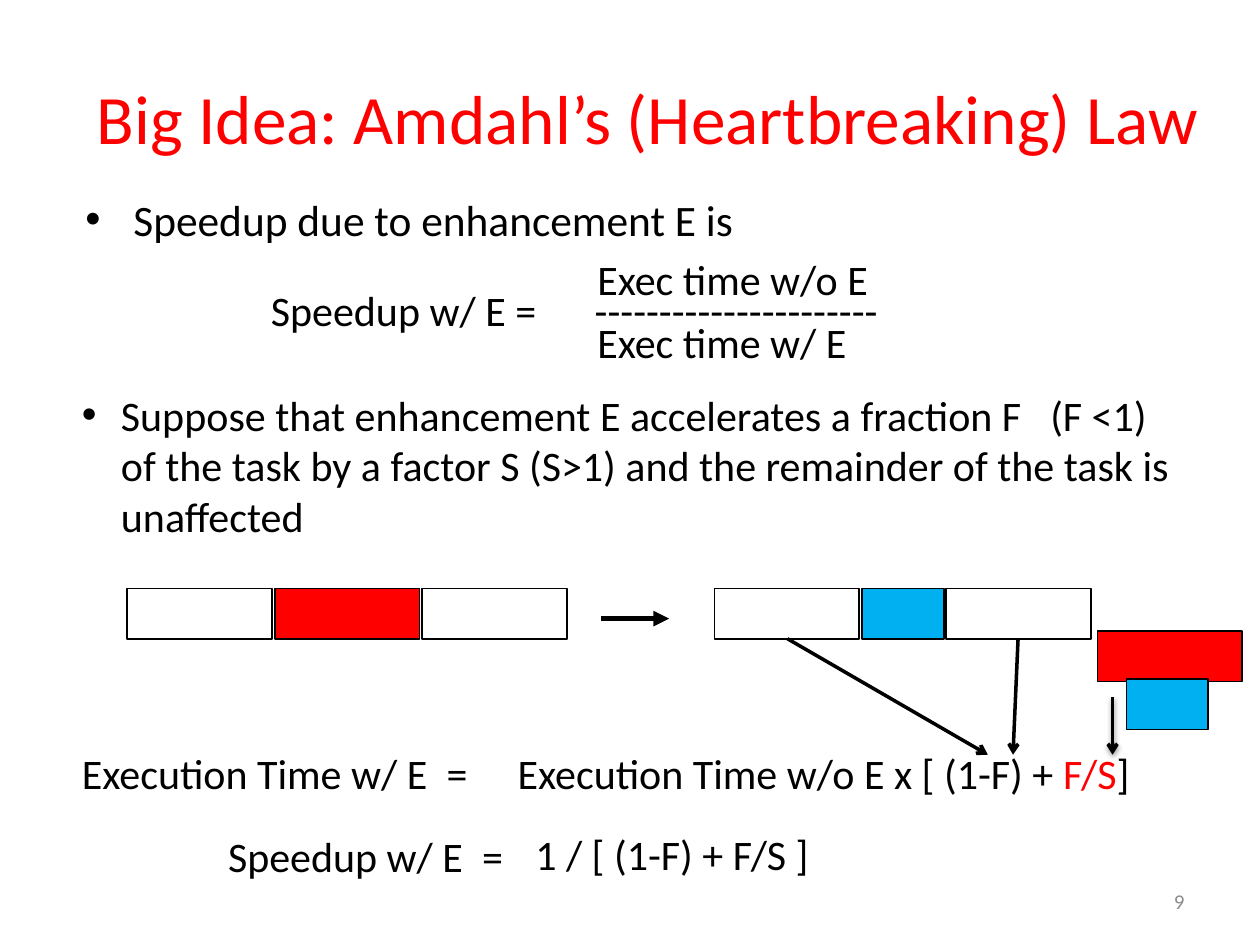
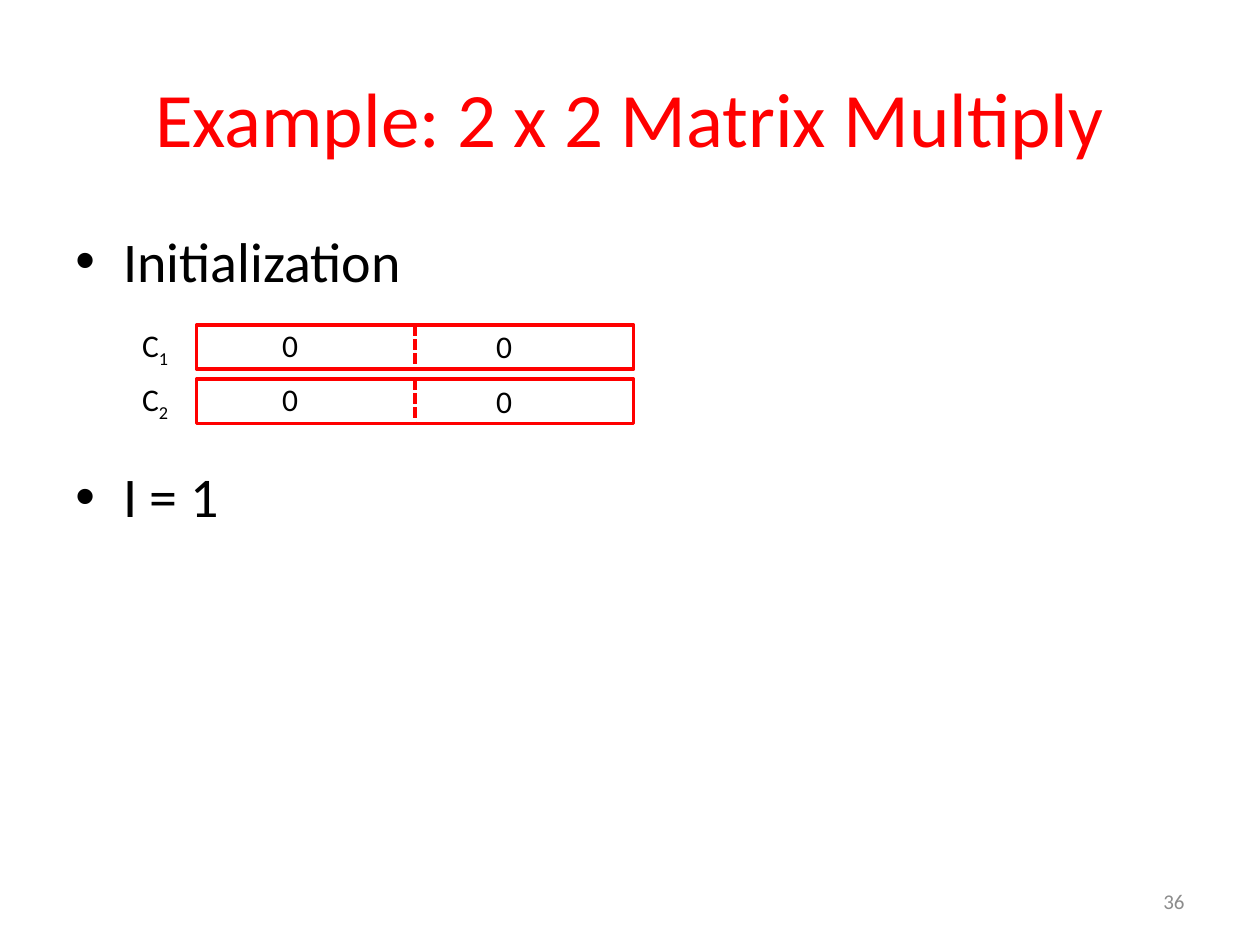
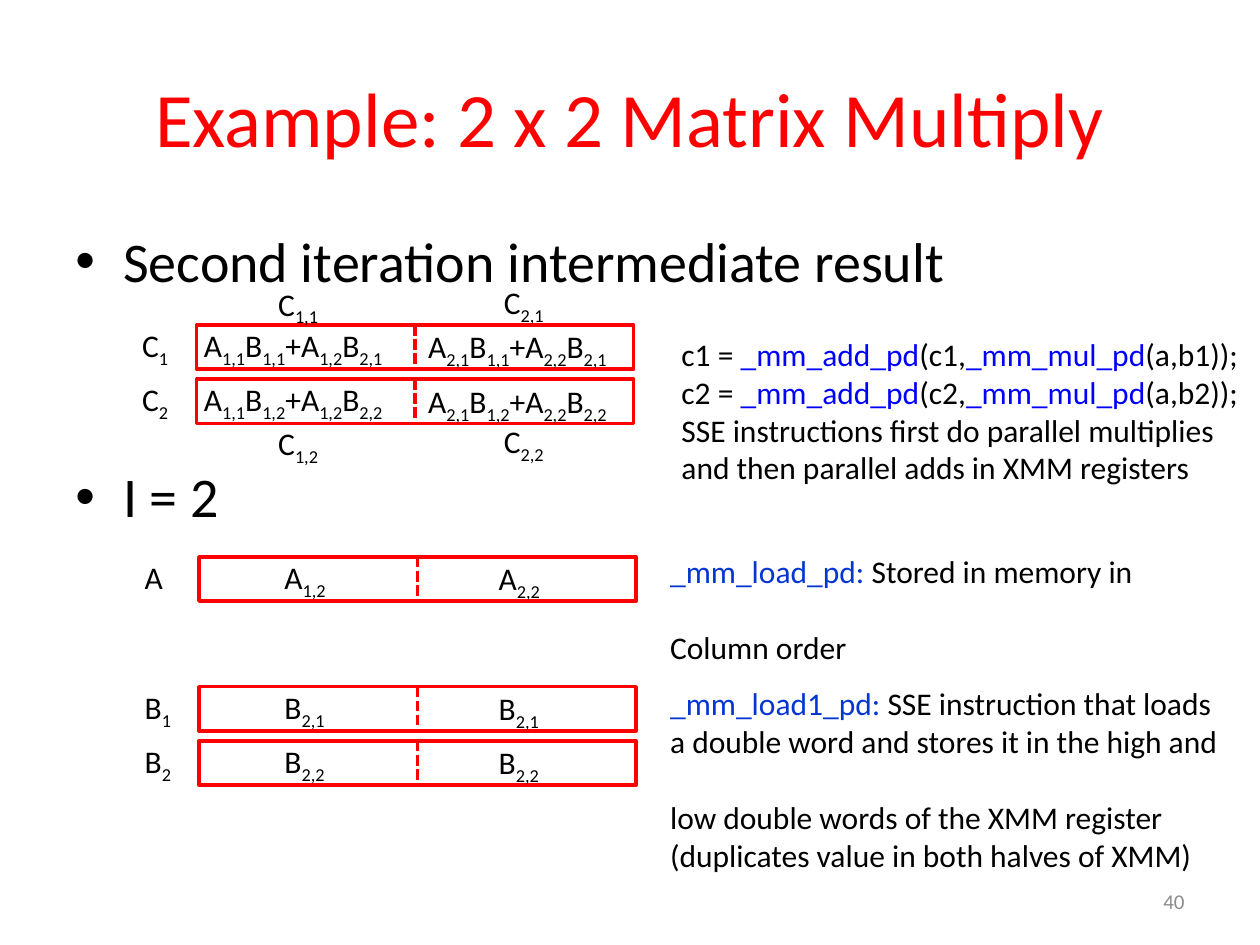
"""Build three lecture slides on Amdahl's law and a 2 x 2 SSE matrix multiply."""
from lxml.etree import SubElement
from pptx import Presentation
from pptx.dml.color import RGBColor
from pptx.enum.dml import MSO_LINE
from pptx.enum.shapes import MSO_CONNECTOR as Connector, MSO_SHAPE as Shape
from pptx.enum.text import MSO_ANCHOR as Anchor, PP_ALIGN as Align
from pptx.oxml.ns import qn
from pptx.util import Inches, Pt

FONT = "Calibri"
WIDTH, HEIGHT = 10, 7.5
BLACK = RGBColor(0x00, 0x00, 0x00)
RED = RGBColor(0xFF, 0x00, 0x00)
SKY = RGBColor(0x00, 0xB0, 0xF0)
CODE = RGBColor(0x00, 0x00, 0xFF)
LOAD = RGBColor(0x05, 0x36, 0xD2)
GREY = RGBColor(0x8C, 0x8C, 0x8C)

ROOMY, TIGHT = (0.1, 0.05), (0.07, 0.03)
BODY_INDENT, FORMULA_INDENT = 0.38, 0.31
WIDE, WIDER = (" ", {"spacing": 5.4}), (" ", {"spacing": 10.8})

LAW_TITLE = "Big Idea: Amdahl’s (Heartbreaking) Law"
LAW_TEXTS = [
    ((2.08, 2.23, 2.5, 0.46), ["Speedup w/ E ="], TIGHT),
    ((4.65, 2.23, 2.76, 0.46), ["----------------------"], TIGHT),
    ((4.67, 1.98, 3.08, 0.45), ["Exec time w/o E"], TIGHT),
    ((4.67, 2.48, 3.08, 0.45), ["Exec time w/ E"], TIGHT),
    ((0.58, 5.9, 3.4, 0.46), ["Execution Time w/ E", WIDE, "="], TIGHT),
    ((1.74, 6.56, 2.4, 0.46), ["Speedup w/ E", WIDE, "="], TIGHT),
    ((4.01, 5.88, 5.3, 0.5),
     ["Execution Time w/o E x [ (1-F) + ", ("F/S", {"color": RED}), "]"], ROOMY),
    ((4.15, 6.53, 2.6, 0.5), ["1 / [ (1-F) + F/S ]"], ROOMY),
]
SUPPOSE = ["Suppose that enhancement E accelerates a fraction F", WIDER,
           "(F <1) of the task by a factor S (S>1) and the remainder of the task is unaffected"]
PART, FAST_PART, PART_HEIGHT, PART_GAP = 1.15, 0.65, 0.4, 0.02
TASKS = [
    (1.01, 4.67, [(PART, None), (PART, RED), (PART, None)]),
    (5.67, 4.67, [(PART, None), (FAST_PART, SKY), (PART, None)]),
    (8.71, 5.01, [(PART, RED)]),
    (8.94, 5.39, [(FAST_PART, SKY)]),
]
ARROWS = [
    ((4.77, 4.91), (5.31, 4.91), 3, "triangle", False),
    ((8.08, 5.07), (8.04, 5.99), 2, "arrow", False),
    ((6.25, 5.07), (7.84, 5.99), 2, "arrow", False),
    ((8.83, 5.53), (8.83, 5.99), 2, "arrow", True),
]

MATRIX_TITLE = "Example: 2 x 2 Matrix Multiply"
REGISTER_WIDTH, REGISTER_HEIGHT, REGISTER_STEP = 3.47, 0.35, 0.43
SHORT_CELLS, LONG_CELLS = (0.58, 2.28), (-0.04, 1.74)
REGISTERS_INIT = [(1.56, 2.58, SHORT_CELLS, [("C~1", "0", "0"), ("C~2", "0", "0")])]
REGISTERS_SECOND = [
    (1.56, 2.58, LONG_CELLS, [
        ("C~1", "A~1,1~B~1,1~+A~1,2~B~2,1", "A~2,1~B~1,1~+A~2,2~B~2,1"),
        ("C~2", "A~1,1~B~1,2~+A~1,2~B~2,2", "A~2,1~B~1,2~+A~2,2~B~2,2")]),
    (1.58, 4.42, SHORT_CELLS, [("A", "A~1,2", "A~2,2")]),
    (1.58, 5.45, SHORT_CELLS, [("B~1", "B~2,1", "B~2,1"), ("B~2", "B~2,2", "B~2,2")]),
]
RESULT_LABELS = [("C~1,1", 2.11, 2.21), ("C~1,2", 2.11, 3.32),
                 ("C~2,1", 3.9, 2.2), ("C~2,2", 3.9, 3.3)]


def update_call(number):
    """Return the spans of one multiply-add statement."""
    add, multiply = [(name, {"color": CODE}) for name in ("_mm_add_pd", "_mm_mul_pd")]
    return [f"c{number} = ", add, f"(c{number},", multiply, f"(a,b{number}));"]


NOTES = [
    ((5.31, 2.61, 4.69, 1.31),
     [update_call(1), update_call(2), ["SSE instructions first do parallel multiplies"],
      ["and then parallel adds in XMM registers"]], None),
    ((5.22, 4.33, 4.6, 1.01),
     [[("_mm_load_pd: ", {"color": LOAD}), "Stored in memory in"], ["Column order"]], 1),
    ((5.22, 5.38, 4.7, 1.61),
     [[("_mm_load1_pd: ", {"color": LOAD}), "SSE instruction that loads"],
      ["a double word and stores it in the high and"],
      ["low double words of the XMM register"],
      ["(duplicates value in both halves of XMM)"]], 2),
]


def subscripts(text):
    """Turn every second part between tildes into a subscript span."""
    return [(part, {"baseline": -25} if order % 2 else {})
            for order, part in enumerate(text.split("~"))]


def add_span(para, text, size, color, baseline=None, spacing=None):
    """Add one formatted run; spacing is in points, baseline in percent."""
    span = para.add_run()
    span.text = text
    for name, value in {"name": FONT, "size": Pt(size)}.items():
        setattr(span.font, name, value)
    span.font.color.rgb = color
    for name, value, scale in (("baseline", baseline, 1000), ("spc", spacing, 100)):
        if value is not None:
            span.font._element.set(name, str(round(value * scale)))


def add_text(page, place, paras, size=18, color=BLACK, align=Align.LEFT,
             anchor=Anchor.TOP, inset=ROOMY, indent=None, gap_at=None, gap=22):
    """Add a text box; indent makes bullets, gap_at names a paragraph set lower."""
    box = page.shapes.add_textbox(*map(Inches, place))
    frame = box.text_frame
    side, edge = map(Inches, inset)
    settings = {"word_wrap": True, "vertical_anchor": anchor, "margin_left": side,
                "margin_right": side, "margin_top": edge, "margin_bottom": edge}
    for name, value in settings.items():
        setattr(frame, name, value)
    for order, spans in enumerate(paras):
        para = frame.add_paragraph() if order else frame.paragraphs[0]
        para.alignment = align
        if order and order == gap_at:
            para.space_before = Pt(gap)
        if indent:
            layout = para._p.get_or_add_pPr()
            layout.set("marL", str(Inches(indent)))
            layout.set("indent", str(-Inches(indent)))
            SubElement(layout, qn("a:buFont"), typeface="Arial")
            SubElement(layout, qn("a:buChar"), char="•")
        for span in spans:
            text, look = (span, {}) if isinstance(span, str) else span
            add_span(para, text, size, **{"color": color, **look})


def add_box(page, place, fill, line, weight):
    """Add an outlined rectangle, filled when a colour is given."""
    box = page.shapes.add_shape(Shape.RECTANGLE, *map(Inches, place))
    box.shadow.inherit = False
    if fill is None:
        box.fill.background()
    else:
        box.fill.solid()
        box.fill.fore_color.rgb = fill
    box.line.color.rgb = line
    box.line.width = Pt(weight)


def add_line(page, start, end, color, weight, head=None, dash=None, shadow=False):
    """Add a straight line with an optional arrowhead, dash and soft shadow."""
    line = page.shapes.add_connector(Connector.STRAIGHT, *map(Inches, start + end))
    line.line.color.rgb = color
    line.line.width = Pt(weight)
    if dash:
        line.line.dash_style = dash
    if head:
        SubElement(line.line._get_or_add_ln(), qn("a:tailEnd"), type=head)
    effects = SubElement(line._element.spPr, qn("a:effectLst"))
    if shadow:
        soft = SubElement(effects, qn("a:outerShdw"), blurRad=str(Pt(3.1)),
                          dist=str(Pt(1.6)), dir="5400000", rotWithShape="0")
        tint = SubElement(soft, qn("a:srgbClr"), val=str(BLACK))
        SubElement(tint, qn("a:alpha"), val="38000")


def add_page(deck, title, number, size=44, width=9):
    """Add a blank page with the shared title and page number."""
    page = deck.slides.add_slide(deck.slide_layouts[6])
    add_text(page, (0.5, 0.3, width, 1.25), [[title]], size, RED, Align.CENTER, Anchor.MIDDLE)
    add_text(page, (7.17, 6.95, 2.33, 0.4), [[str(number)]], 12, GREY, Align.RIGHT,
             Anchor.MIDDLE)
    return page


def add_register(page, left, top, columns, label, cells):
    """Add a two-part register with its label and cell values."""
    middle = left + REGISTER_WIDTH / 2
    add_box(page, (left, top, REGISTER_WIDTH, REGISTER_HEIGHT), None, RED, 2)
    add_line(page, (middle, top), (middle, top + REGISTER_HEIGHT), RED, 2,
             dash=MSO_LINE.SQUARE_DOT)
    add_text(page, (left - 0.53, top - 0.04, 0.5, 0.4), [subscripts(label)])
    for column, rise, cell in zip(columns, (0.04, 0.03), cells):
        width = 1.9 if "+" in cell else 0.7
        add_text(page, (left + column, top - rise, width, 0.4), [subscripts(cell)])


def add_matrix_page(deck, number, topic, step, registers):
    """Add a matrix page with its two bullets and registers."""
    page = add_page(deck, MATRIX_TITLE, number)
    add_text(page, (0.5, 1.75, 9, 2.98), [[topic], [step]], 32, indent=BODY_INDENT,
             gap_at=1, gap=96)
    for left, top, columns, rows in registers:
        for order, (label, *cells) in enumerate(rows):
            add_register(page, left, top + order * REGISTER_STEP, columns, label, cells)
    return page


def add_law_page(deck):
    """Add the page on Amdahl's law."""
    page = add_page(deck, LAW_TITLE, 9, 39.6, 9.28)
    add_text(page, (0.58, 1.48, 8.92, 0.45), [["Speedup due to enhancement E is"]], 24.8,
             indent=BODY_INDENT)
    add_text(page, (0.58, 3.06, 8.92, 1.27), [SUPPOSE], 24, inset=TIGHT, indent=FORMULA_INDENT)
    for place, spans, inset in LAW_TEXTS:
        add_text(page, place, [spans], 24, inset=inset)
    for left, top, parts in TASKS:
        for width, fill in parts:
            add_box(page, (left, top, width, PART_HEIGHT), fill, BLACK, 1)
            left += width + PART_GAP
    for start, end, weight, head, shadow in ARROWS:
        add_line(page, start, end, BLACK, weight, head, shadow=shadow)


def main():
    """Build and save the deck."""
    deck = Presentation()
    deck.slide_width, deck.slide_height = Inches(WIDTH), Inches(HEIGHT)
    add_law_page(deck)
    add_matrix_page(deck, 36, "Initialization", "I = 1", REGISTERS_INIT)
    page = add_matrix_page(deck, 40, "Second iteration intermediate result", "I = 2",
                           REGISTERS_SECOND)
    for label, left, top in RESULT_LABELS:
        add_text(page, (left, top, 0.7, 0.4), [subscripts(label)])
    for place, paras, gap_at in NOTES:
        add_text(page, place, paras, gap_at=gap_at)
    deck.save("out.pptx")


if __name__ == "__main__":
    main()
